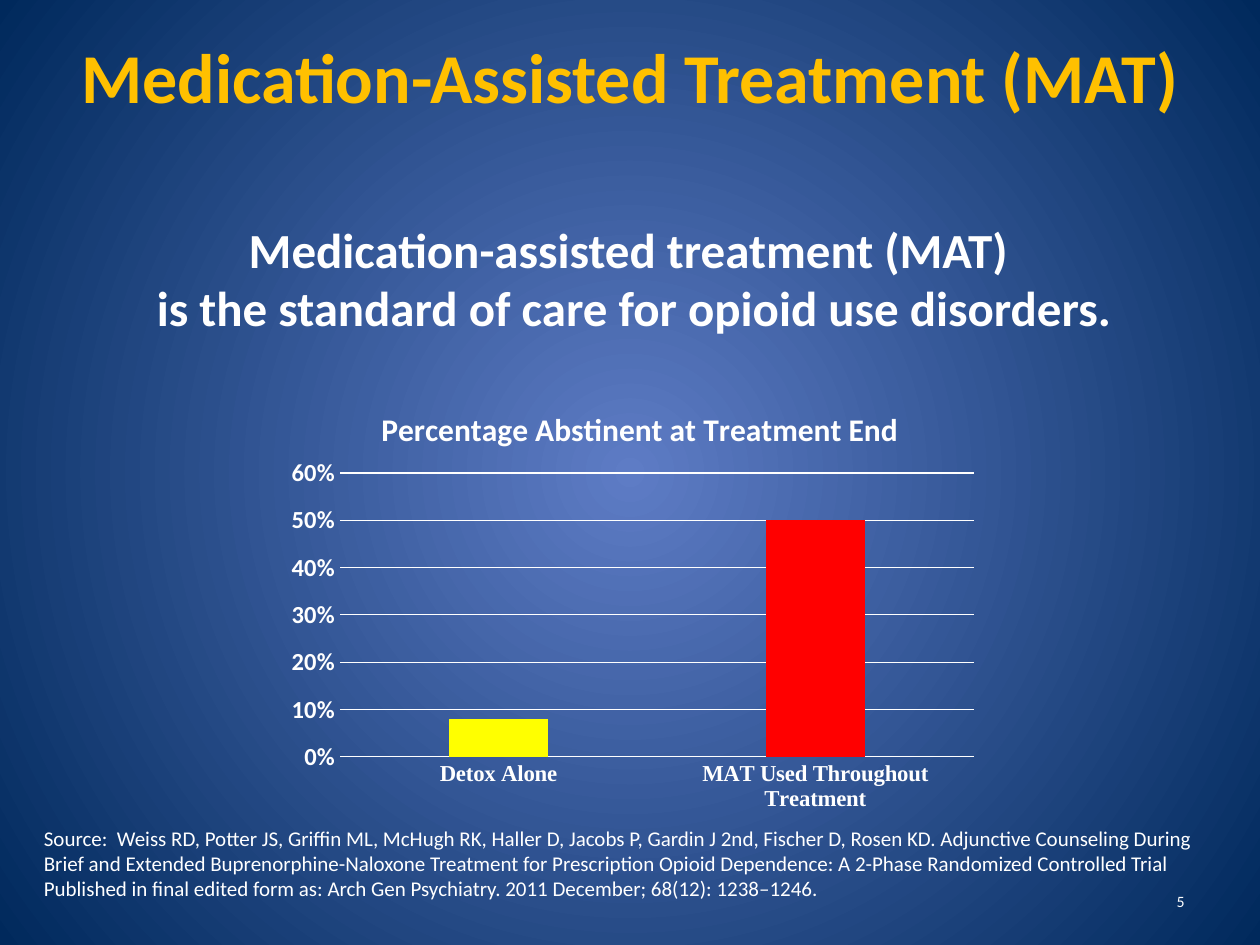
from dataclasses import dataclass

from lxml.etree import SubElement
from pptx import Presentation
from pptx.chart.data import CategoryChartData as ChartData
from pptx.dml.color import RGBColor as RGB
from pptx.enum.chart import XL_CHART_TYPE as Kind, XL_TICK_MARK as Tick
from pptx.enum.text import MSO_ANCHOR as Anchor, PP_ALIGN as Align
from pptx.oxml import parse_xml
from pptx.oxml.ns import nsdecls, qn
from pptx.util import Inches, Pt


@dataclass(frozen=True)
class Theme:
    sans: str = "Calibri"
    serif: str = "Times New Roman"
    white: str = "FFFFFF"
    gold: str = "FFC000"
    glow: str = "5E7CC5"
    navy: str = "00295C"
    blue: str = "4F81BD"
    bars: tuple = ("FFFF00", "FF0000")
    title: int = 40
    lead: int = 28
    head: int = 18
    value: int = 14
    label: int = 13
    note: int = 12
    page: int = 9


T = Theme()


@dataclass(frozen=True)
class Block:
    box: tuple
    lines: tuple
    size: int
    color: str = T.white
    bold: bool = False
    align: Align = Align.LEFT
    anchor: Anchor = Anchor.TOP


BLOCKS = (
    Block((0.5, 0.09, 9, 1.02), ("Medication-Assisted Treatment (MAT)",),
          T.title, T.gold, True, Align.CENTER, Anchor.MIDDLE),
    Block((0.03, 1.69, 10, 1.33),
          ("Medication-assisted treatment (MAT) ",
           "is the standard of care for opioid use disorders."),
          T.lead, bold=True, align=Align.CENTER),
    Block((0.25, 6.5, 9.67, 0.89),
          ("Source:  Weiss RD, Potter JS, Griffin ML, McHugh RK, Haller D, "
           "Jacobs P, Gardin J 2nd, Fischer D, Rosen KD. Adjunctive Counseling "
           "During Brief and Extended Buprenorphine-Naloxone Treatment for "
           "Prescription Opioid Dependence: A 2-Phase Randomized Controlled "
           "Trial Published in final edited form as: Arch Gen Psychiatry. "
           "2011 December; 68(12): 1238–1246.",), T.note),
    Block((7.17, 6.95, 2.33, 0.4), ("5",), T.page,
          align=Align.RIGHT, anchor=Anchor.MIDDLE),
)


def style(font, size: int, color: str = T.white, bold: bool = False,
          face: str = T.sans) -> None:
    font.name, font.size, font.bold = face, Pt(size), bold
    font.color.rgb = RGB.from_string(color)


def paint(slide) -> None:
    """Fill the background with a round glow from the centre."""
    fill = slide.background.fill
    fill.solid()
    old = slide._element.cSld.find(qn("p:bg")).find(".//" + qn("a:solidFill"))
    stops = "".join(
        f'<a:gs pos="{pos}"><a:srgbClr val="{color}"/></a:gs>'
        for pos, color in ((0, T.glow), (100000, T.navy)))
    old.getparent().replace(old, parse_xml(
        f'<a:gradFill {nsdecls("a")} rotWithShape="1"><a:gsLst>{stops}</a:gsLst>'
        '<a:path path="circle"><a:fillToRect l="50000" t="50000" '
        'r="50000" b="50000"/></a:path></a:gradFill>'))


def write(slide, block: Block) -> None:
    frame = slide.shapes.add_textbox(*map(Inches, block.box)).text_frame
    frame.word_wrap = True
    frame.vertical_anchor = block.anchor
    para = frame.paragraphs[0]
    para.alignment = block.align
    for i, line in enumerate(block.lines):
        if i:
            para.add_line_break()
        run = para.add_run()
        run.text = line
        style(run.font, block.size, block.color, block.bold)


def place(part, **spots: float) -> None:
    """Pin a chart part at fractions of the chart's size."""
    layout = part.find(qn("c:layout"))
    if layout is None:
        layout = SubElement(part, qn("c:layout"))
        part.remove(layout)
        if part.tag == qn("c:title"):
            part.find(qn("c:tx")).addnext(layout)
        else:
            part.insert(0, layout)
    for child in list(layout):
        layout.remove(child)
    manual = SubElement(layout, qn("c:manualLayout"))
    if "w" in spots:
        SubElement(manual, qn("c:layoutTarget")).set("val", "inner")
    for name in ("x", "y"):
        SubElement(manual, qn(f"c:{name}Mode")).set("val", "edge")
    for name, spot in spots.items():
        SubElement(manual, qn(f"c:{name}")).set("val", str(spot))


def rule(line) -> None:
    line.color.rgb = RGB.from_string(T.white)
    line.width = Pt(0.75)


def plot(slide) -> None:
    data = ChartData(number_format="0%")
    data.categories = ("Detox Alone", "MAT Used Throughout Treatment")
    data.add_series("Series 1", (0.08, 0.5))
    box = map(Inches, (2.19, 2.98, 5.65, 3.52))
    chart = slide.shapes.add_chart(Kind.COLUMN_CLUSTERED, *box, data).chart
    chart.has_legend = False
    style(chart.font, 10, "000000", face=T.serif)

    chart.has_title = True
    run = chart.chart_title.text_frame.paragraphs[0].add_run()
    run.text = "Percentage Abstinent at Treatment End"
    style(run.font, T.head, bold=True)
    chart.chart_title.include_in_layout = False
    place(chart.chart_title._element, x=0.14, y=0.06)
    place(chart._chartSpace.chart.plotArea, x=0.09, y=0.22, w=0.89, h=0.64)

    cats, vals = chart.category_axis, chart.value_axis
    for axis in (cats, vals):
        axis.major_tick_mark = axis.minor_tick_mark = Tick.NONE
    style(cats.tick_labels.font, T.label, bold=True, face=T.serif)
    rule(cats.format.line)
    style(vals.tick_labels.font, T.value, bold=True)
    vals.tick_labels.number_format = "0%"
    vals.tick_labels.number_format_is_linked = False
    vals.minimum_scale, vals.maximum_scale, vals.major_unit = 0, 0.6, 0.1
    vals.format.line.fill.background()
    rule(vals.major_gridlines.format.line)

    group = chart.plots[0]
    group.gap_width, group.overlap = 219, -27
    group.vary_by_categories = False
    series = group.series[0]
    fills = [series.format.fill]
    fills += [series.points[i].format.fill for i in range(len(T.bars))]
    for fill, color in zip(fills, (T.blue, *T.bars)):
        fill.solid()
        fill.fore_color.rgb = RGB.from_string(color)


def main() -> None:
    deck = Presentation()
    deck.slide_width, deck.slide_height = Inches(10), Inches(7.5)
    slide = deck.slides.add_slide(deck.slide_layouts[6])
    paint(slide)
    for block in BLOCKS:
        write(slide, block)
    plot(slide)
    deck.save("out.pptx")


if __name__ == "__main__":
    main()
